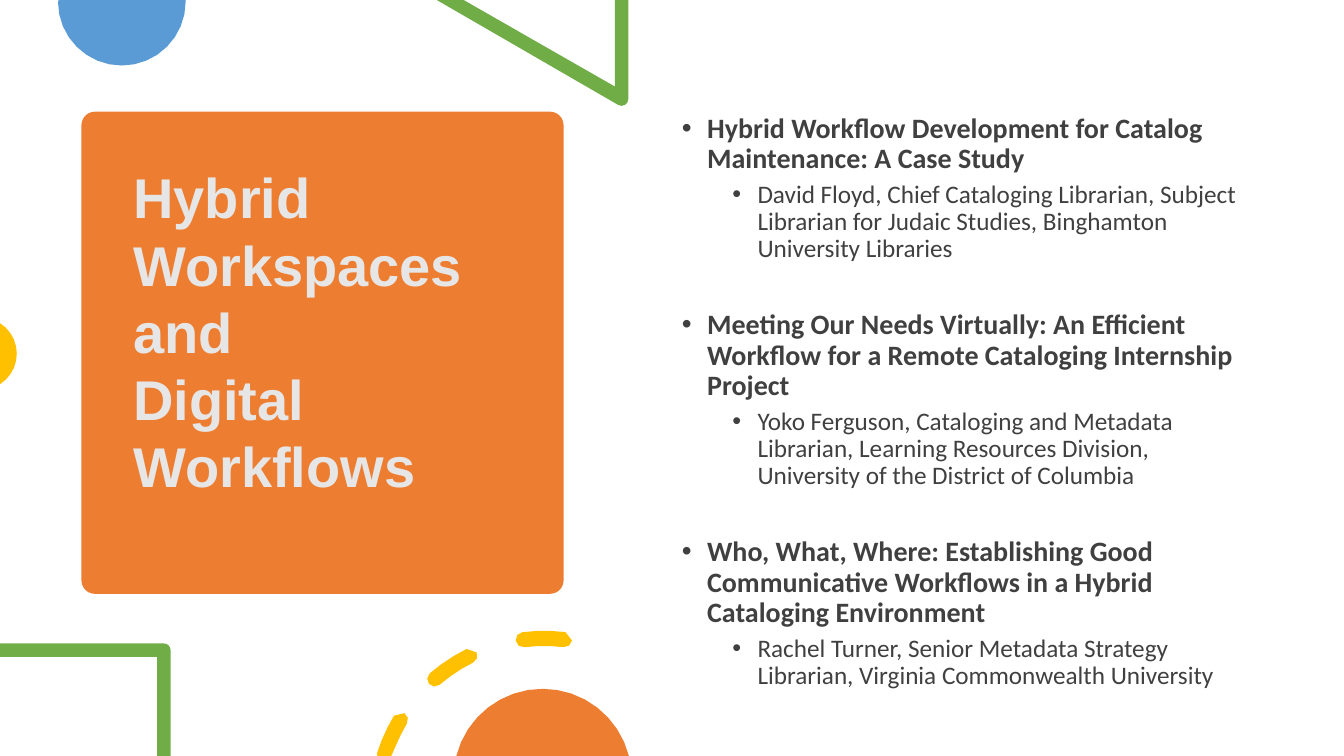
"""Build the session slide on hybrid workspaces and digital workflows."""
from math import cos, radians, sin

from lxml.etree import Element
from pptx import Presentation
from pptx.dml.color import RGBColor
from pptx.enum.shapes import MSO_SHAPE as Preset
from pptx.enum.text import MSO_ANCHOR as Anchor
from pptx.oxml.ns import qn
from pptx.util import Inches, Pt

ORANGE = RGBColor(0xED, 0x7D, 0x31)
BLUE = RGBColor(0x5B, 0x9B, 0xD5)
GREEN = RGBColor(0x70, 0xAD, 0x47)
YELLOW = RGBColor(0xFF, 0xC0, 0x00)
DARK_GREY = RGBColor(0x40, 0x40, 0x40)
PALE_GREY = RGBColor(0xE7, 0xE6, 0xE6)

COLUMNS, ROWS = 16, 9
CELL = Inches(7.5) // ROWS

TITLE = ["Hybrid Workspaces and", "Digital Workflows"]
SESSIONS = [
    ("Hybrid Workflow Development for Catalog Maintenance: A Case Study",
     "David Floyd, Chief Cataloging Librarian, Subject Librarian for Judaic "
     "Studies, Binghamton University Libraries"),
    ("Meeting Our Needs Virtually: An Efficient Workflow for a Remote "
     "Cataloging Internship Project",
     "Yoko Ferguson, Cataloging and Metadata Librarian, Learning Resources "
     "Division, University of the District of Columbia"),
    ("Who, What, Where: Establishing Good Communicative Workflows in a Hybrid "
     "Cataloging Environment",
     "Rachel Turner, Senior Metadata Strategy Librarian, Virginia "
     "Commonwealth University"),
]
DASH_ANGLES = [(-72.5, -58.9), (-40.7, -26.3), (-7.2, 6.9)]


def cells(*counts):
    """Turn counts of grid cells into lengths."""
    return [round(count * CELL) for count in counts]


def arc(x, y, radius, start, end, steps=4):
    """List points on an arc, with degrees clockwise from the top."""
    angles = [radians(start + (end - start) * step / steps)
              for step in range(steps + 1)]
    return [(x + radius * sin(angle), y - radius * cos(angle))
            for angle in angles]


def paint(shape, color):
    """Give a shape a flat fill without line or shadow."""
    shape.shadow.inherit = False
    shape.fill.solid()
    shape.fill.fore_color.rgb = color
    shape.line.fill.background()


def add_outline(page, color, *contours):
    """Draw one filled shape from contours of grid points."""
    paths = [[cells(*point) for point in contour] for contour in contours]
    builder = page.shapes.build_freeform(*paths[0][0])
    for index, (first, *rest) in enumerate(paths):
        if index:
            builder.move_to(*first)
        builder.add_line_segments(rest, close=True)
    paint(builder.convert_to_shape(), color)


def dash(x, y, radius, half, start, end):
    """Outline a round-ended piece of a ring, cut at the slide's bottom."""
    tail, head = arc(x, y, radius, start, end, 1)
    points = (arc(x, y, radius + half, start, end, 3)
              + arc(*head, half, end + 90, end + 180 - 45, 1)
              + arc(x, y, radius - half, end, start, 3)
              + arc(*tail, half, start + 225, start + 315, 2))
    return [(across, min(down, ROWS)) for across, down in points]


def add_frame(page, left, top, width, height):
    """Add an empty wrapping text box and return its text frame."""
    frame = page.shapes.add_textbox(*cells(left, top, width, height)).text_frame
    frame.word_wrap = True
    frame.vertical_anchor = Anchor.TOP
    return frame


def add_para(frame, text, name, size, color, bold):
    """Fill the first empty paragraph or add one, and set its font."""
    first = frame.paragraphs[0]
    para = frame.add_paragraph() if first.runs else first
    para.add_run().text = text
    font = para.font
    font.name, font.size, font.bold = name, Pt(size), bold
    font.color.rgb = color
    return para


def add_bullet(frame, text, size, bold, indent, before, level):
    """Add a bulleted paragraph with a hanging indent."""
    para = add_para(frame, text, "Calibri", size, DARK_GREY, bold)
    para.level = level
    para.line_spacing = 0.9
    para.space_before = Pt(before)
    properties = para._p.get_or_add_pPr()
    properties.set("marL", str(Inches(indent)))
    properties.set("indent", str(-Inches(0.25)))
    run_defaults = properties.find(qn("a:defRPr"))
    run_defaults.addprevious(Element(qn("a:buFont"), typeface="Arial"))
    run_defaults.addprevious(Element(qn("a:buChar"), char="•"))


def add_decoration(page):
    """Draw the colored shapes around the title card."""
    add_outline(page, BLUE, [(0.7, 0), *arc(1.45, 0.02, 0.76, 270, 90, 16),
                             (2.21, 0)])
    add_outline(page, GREEN,
                [(5.2, 0), *arc(7.4, 1.18, 0.08, 210, 90), (7.48, 0),
                 (7.32, 0), (7.32, 1.03), (5.52, 0)])
    add_outline(page, YELLOW, arc(-0.23, 4.21, 0.43, 32.3, 147.7, 10))
    add_outline(page, GREEN,
                [(0, 7.66), *arc(1.95, 7.74, 0.08, 0, 90), (2.03, ROWS),
                 (1.87, ROWS), (1.87, 7.82), (0, 7.82)])
    add_outline(page, YELLOW, *(dash(6.48, 9.6, 2, 0.09, start, end)
                                for start, end in DASH_ANGLES))
    add_outline(page, ORANGE, arc(6.46, 9.26, 1.06, -75.8, 75.8, 16))


def add_title_card(page):
    """Add the orange card with the session title."""
    card = page.shapes.add_shape(Preset.ROUNDED_RECTANGLE,
                                 *cells(0.97, 1.33, 5.74, 5.74))
    card.adjustments[0] = 0.028
    paint(card, ORANGE)
    frame = add_frame(page, 1.47, 1.88, 4.68, 4.52)
    for line in TITLE:
        add_para(frame, line, "Arial", 40, PALE_GREY, True)


def add_sessions(page):
    """List each talk with its speaker below."""
    frame = add_frame(page, 8, 0.95, 6.9, 7.9)
    frame.margin_top = Inches(0.34)
    for index, (talk, speaker) in enumerate(SESSIONS):
        add_bullet(frame, talk, 20, True, 0.25, 34 if index else 0, 0)
        add_bullet(frame, speaker, 18, False, 0.75, 5, 1)


def main():
    """Build and save the deck."""
    deck = Presentation()
    deck.slide_width, deck.slide_height = cells(COLUMNS, ROWS)
    page = deck.slides.add_slide(deck.slide_layouts[6])
    add_title_card(page)
    add_decoration(page)
    add_sessions(page)
    deck.save("out.pptx")


if __name__ == "__main__":
    main()
